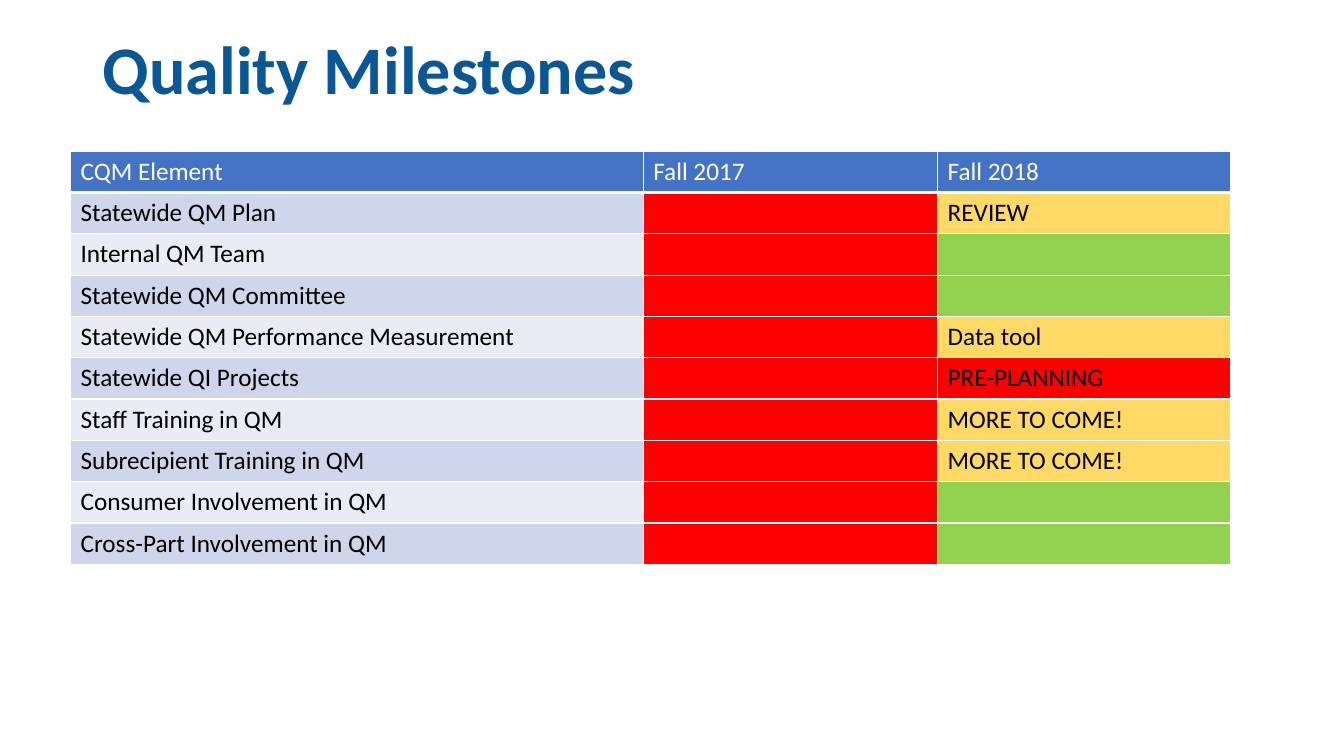
"""Build the Quality Milestones slide with its status table."""
import dataclasses

import lxml.etree
import pptx
import pptx.dml.color
import pptx.enum.text
import pptx.oxml.ns
import pptx.slide
import pptx.table
import pptx.text.text
import pptx.util

Inches = pptx.util.Inches
RGBColor = pptx.dml.color.RGBColor

FONT = "Calibri"
NAVY = RGBColor(0x09, 0x58, 0x95)
BLUE = RGBColor(0x44, 0x72, 0xC4)
WHITE = RGBColor(0xFF, 0xFF, 0xFF)
BLACK = RGBColor(0x00, 0x00, 0x00)
BANDS = (RGBColor(0xCF, 0xD5, 0xEA), RGBColor(0xE9, 0xEB, 0xF5))
RED = RGBColor(0xFF, 0x00, 0x00)
GOLD = RGBColor(0xFF, 0xD9, 0x66)
GREEN = RGBColor(0x92, 0xD0, 0x50)

HEADS = ("CQM Element", "Fall 2017", "Fall 2018")
WIDTHS = (5.68, 2.92, 2.91)
HEIGHT = 0.41


@dataclasses.dataclass(frozen=True)
class Goal:
    """A quality element and its state in the second year."""
    name: str
    color: RGBColor
    note: str = ""


GOALS = (
    Goal("Statewide QM Plan", GOLD, "REVIEW"),
    Goal("Internal QM Team", GREEN),
    Goal("Statewide QM Committee", GREEN),
    Goal("Statewide QM Performance Measurement", GOLD, "Data tool"),
    Goal("Statewide QI Projects", RED, "PRE-PLANNING"),
    Goal("Staff Training in QM", GOLD, "MORE TO COME!"),
    Goal("Subrecipient Training in QM", GOLD, "MORE TO COME!"),
    Goal("Consumer Involvement in QM", GREEN),
    Goal("Cross-Part Involvement in QM", GREEN),
)


def style(para: pptx.text.text._Paragraph, size: float, color: RGBColor, bold: bool) -> None:
    """Set the font of a paragraph."""
    font = para.font
    font.name = FONT
    font.size = pptx.util.Pt(size)
    font.bold = bold
    font.color.rgb = color


def edge(cell: pptx.table._Cell, side: str, width: float) -> None:
    """Draw a white border on one side of a cell."""
    qn = pptx.oxml.ns.qn
    props = cell._tc.get_or_add_tcPr()
    line = lxml.etree.SubElement(props, qn(f"a:ln{side}"), w=str(pptx.util.Pt(width)))
    fill = lxml.etree.SubElement(line, qn("a:solidFill"))
    lxml.etree.SubElement(fill, qn("a:srgbClr"), val=str(WHITE))


def paint(cell: pptx.table._Cell, text: str, fill: RGBColor, head: bool) -> None:
    """Fill one table cell with its text, borders and colour."""
    cell.text = text
    style(cell.text_frame.paragraphs[0], 18, WHITE if head else BLACK, False)
    for side in "LRTB":
        edge(cell, side, 3 if head and side == "B" else 1)
    cell.fill.solid()
    cell.fill.fore_color.rgb = fill


def add_title(slide: pptx.slide.Slide) -> None:
    """Add the slide title."""
    box = slide.shapes.add_textbox(Inches(0.92), Inches(0.26), Inches(11.5), Inches(0.91))
    frame = box.text_frame
    frame.word_wrap = True
    frame.vertical_anchor = pptx.enum.text.MSO_ANCHOR.MIDDLE
    para = frame.paragraphs[0]
    para.text = "Quality Milestones"
    para.line_spacing = 0.9
    style(para, 48.6, NAVY, True)


def add_grid(slide: pptx.slide.Slide) -> None:
    """Add the table of milestones."""
    count = len(GOALS) + 1
    grid = slide.shapes.add_table(
        count, len(HEADS), Inches(0.7), Inches(1.5),
        Inches(sum(WIDTHS)), Inches(HEIGHT * count),
    ).table
    for col, width in zip(grid.columns, WIDTHS):
        col.width = Inches(width)
    for row in grid.rows:
        row.height = Inches(HEIGHT)
    for col, head in enumerate(HEADS):
        paint(grid.cell(0, col), head, BLUE, True)
    for row, goal in enumerate(GOALS, 1):
        band = BANDS[(row - 1) % 2]
        cells = ((goal.name, band), ("", RED), (goal.note, goal.color))
        for col, (text, fill) in enumerate(cells):
            paint(grid.cell(row, col), text, fill, False)


def main() -> None:
    """Make the deck and save it."""
    deck = pptx.Presentation()
    deck.slide_width = Inches(13.33)
    deck.slide_height = Inches(7.5)
    slide = deck.slides.add_slide(deck.slide_layouts[6])
    add_title(slide)
    add_grid(slide)
    deck.save("out.pptx")


if __name__ == "__main__":
    main()
